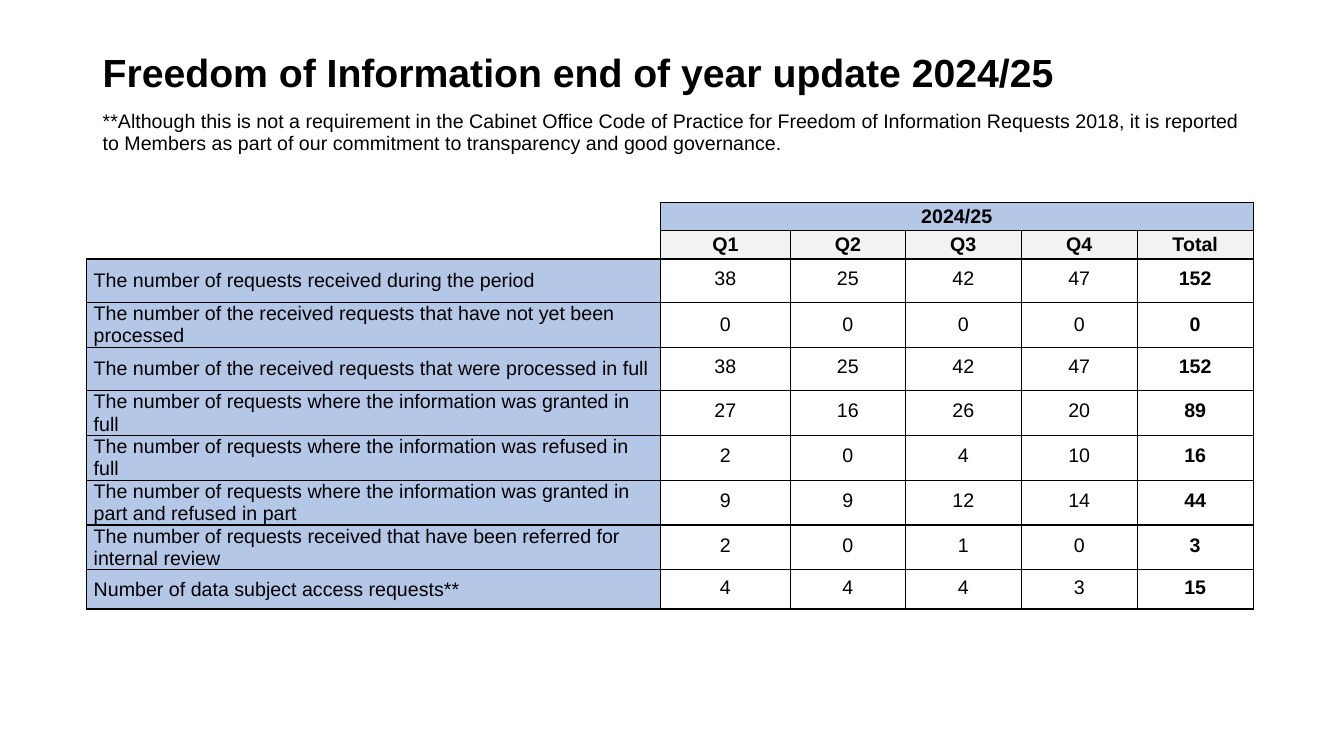
from lxml.etree import SubElement
from pptx import Presentation
from pptx.dml.color import RGBColor
from pptx.enum.text import MSO_ANCHOR, PP_ALIGN
from pptx.oxml.ns import qn
from pptx.util import Inches, Pt

COLORS = {"ink": "000000", "blue": "B4C7E7", "grey": "F2F2F2", "white": "FFFFFF"}
TITLE = "Freedom of Information end of year update 2024/25"
NOTE = (
    "**Although this is not a requirement in the Cabinet Office Code of Practice "
    "for Freedom of Information Requests 2018, it is reported to Members as part "
    "of our commitment to transparency and good governance."
)
YEAR = "2024/25"
HEADS = ["Q1", "Q2", "Q3", "Q4", "Total"]
COUNTS = [
    ("The number of requests received during the period", [38, 25, 42, 47, 152]),
    ("The number of the received requests that have not yet been processed", [0, 0, 0, 0, 0]),
    ("The number of the received requests that were processed in full", [38, 25, 42, 47, 152]),
    ("The number of requests where the information was granted in full", [27, 16, 26, 20, 89]),
    ("The number of requests where the information was refused in full", [2, 0, 4, 10, 16]),
    ("The number of requests where the information was granted in part and refused in part",
     [9, 9, 12, 14, 44]),
    ("The number of requests received that have been referred for internal review",
     [2, 0, 1, 0, 3]),
    ("Number of data subject access requests**", [4, 4, 4, 3, 15]),
]
WIDTHS = [5.69, 1.29, 1.14, 1.15, 1.15, 1.15]
HEIGHTS = [0.28, 0.28, 0.43, 0.44, 0.43, 0.43, 0.41, 0.43, 0.43, 0.39]
WIDE = (0.07, 0, 0.07, 0)
TIGHT = (0.01, 0.01, 0.01, 0.05)


def set_font(para, size, bold):
    font = para.font
    font.name = "Arial"
    font.size = Pt(size)
    font.bold = bold
    font.color.rgb = RGBColor.from_string(COLORS["ink"])


def add_intro(slide):
    box = slide.shapes.add_textbox(Inches(0.92), Inches(0.48), Inches(11.5), Inches(1.2))
    frame = box.text_frame
    frame.word_wrap = True
    title = frame.paragraphs[0]
    title.text = TITLE
    title.line_spacing = 0.9
    set_font(title, 28, True)
    note = frame.add_paragraph()
    note.text = NOTE
    note.line_spacing = Pt(16)
    note.space_before = Pt(10)
    set_font(note, 14, False)


def set_edges(cell, shown):
    """Draw the sides named in shown (of L, R, T, B) and hide the others."""
    props = cell._tc.get_or_add_tcPr()
    for side in "LRTB":
        line = SubElement(props, qn(f"a:ln{side}"), w=str(Pt(1)))
        if side in shown:
            fill = SubElement(line, qn("a:solidFill"))
            SubElement(fill, qn("a:srgbClr"), val=COLORS["ink"])
        else:
            SubElement(line, qn("a:noFill"))


def fill_cell(cell, text, color=None, bold=False, center=True, inset=WIDE, edges="LRTB"):
    set_edges(cell, edges)
    if color:
        cell.fill.solid()
        cell.fill.fore_color.rgb = RGBColor.from_string(COLORS[color])
    else:
        cell.fill.background()
    cell.vertical_anchor = MSO_ANCHOR.MIDDLE
    sides = [Inches(gap) for gap in inset]
    cell.margin_left, cell.margin_top, cell.margin_right, cell.margin_bottom = sides
    para = cell.text_frame.paragraphs[0]
    para.text = text
    para.alignment = PP_ALIGN.CENTER if center else PP_ALIGN.LEFT
    if inset == WIDE:
        para.line_spacing = Pt(16)
    set_font(para, 14, bold)


def add_counts(slide):
    frame = slide.shapes.add_table(
        len(HEIGHTS), len(WIDTHS), Inches(0.86), Inches(2.01),
        Inches(sum(WIDTHS)), Inches(sum(HEIGHTS)))
    table = frame.table
    table.first_row = table.horz_banding = False
    for col, width in zip(table.columns, WIDTHS):
        col.width = Inches(width)
    for row, height in zip(table.rows, HEIGHTS):
        row.height = Inches(height)

    fill_cell(table.cell(0, 0), "", edges="R")
    fill_cell(table.cell(1, 0), "", edges="RB")
    table.cell(0, 1).merge(table.cell(0, len(HEADS)))
    for col, head in enumerate(HEADS, 1):
        fill_cell(table.cell(0, col), YEAR if col == 1 else "", "blue", True)
        fill_cell(table.cell(1, col), head, "grey", True)
    for row, (label, values) in enumerate(COUNTS, 2):
        fill_cell(table.cell(row, 0), label, "blue", center=False)
        inset = TIGHT if any(values) else WIDE
        for col, value in enumerate(values, 1):
            fill_cell(table.cell(row, col), str(value), "white",
                      bold=col == len(HEADS), inset=inset)


def main():
    deck = Presentation()
    deck.slide_width = Inches(13.33)
    deck.slide_height = Inches(7.5)
    slide = deck.slides.add_slide(deck.slide_layouts[6])
    add_intro(slide)
    add_counts(slide)
    deck.save("out.pptx")


if __name__ == "__main__":
    main()
